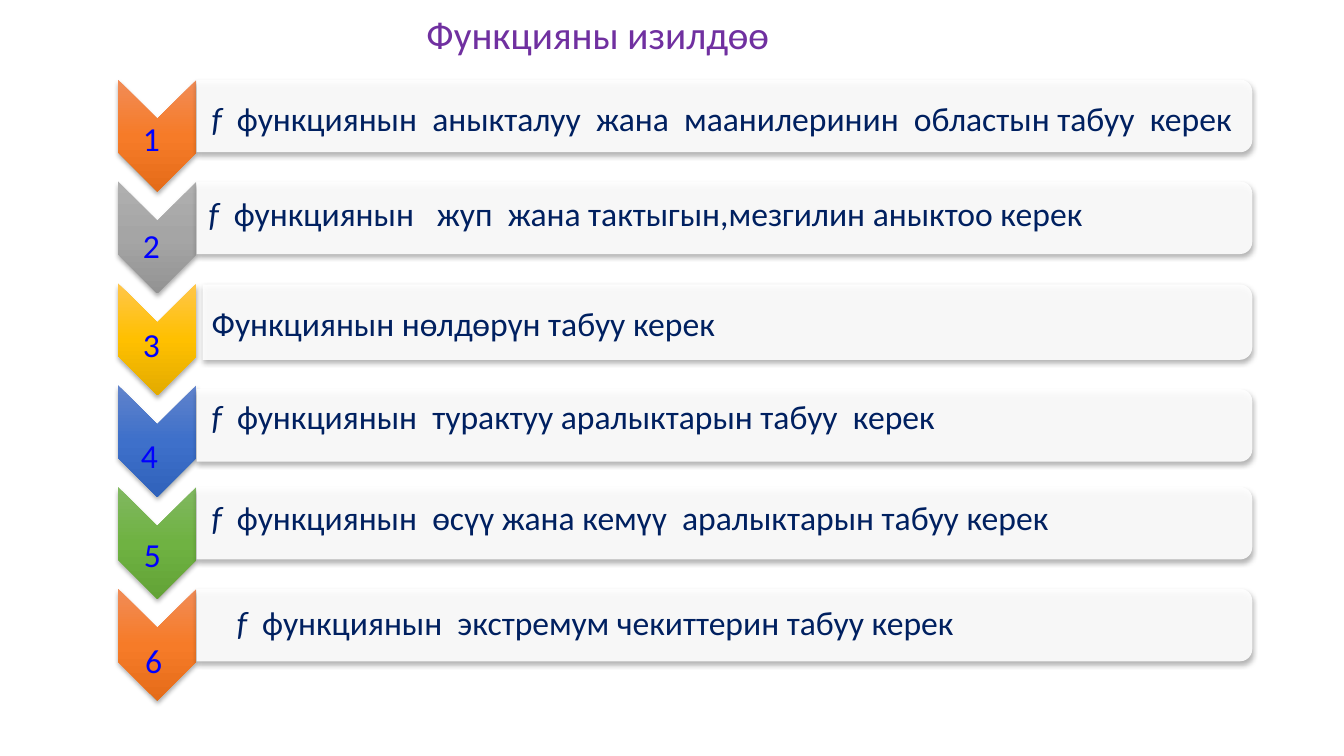
from dataclasses import dataclass

from lxml.etree import SubElement
from pptx import Presentation
from pptx.dml.color import RGBColor
from pptx.enum.shapes import MSO_SHAPE as Preset
from pptx.enum.text import MSO_ANCHOR as Anchor, PP_ALIGN as Align
from pptx.oxml import parse_xml
from pptx.oxml.ns import qn
from pptx.util import Pt

PX = 9144
FONT = "Calibri"
PURPLE = RGBColor(0x70, 0x30, 0xA0)
BLUE = RGBColor(0x00, 0x00, 0xFF)
NAVY = RGBColor(0x00, 0x20, 0x60)
WHITE = RGBColor(0xFF, 0xFF, 0xFF)
BLACK = RGBColor(0x00, 0x00, 0x00)


def shades(*codes):
    """Return the colours of a three-stop gradient."""
    return [RGBColor.from_string(code) for code in codes]


ORANGE_SHADES = shades("F18C57", "F67B28", "E56C19")
GREY_SHADES = shades("AFAFAF", "A5A5A5", "939393")
GOLD_SHADES = shades("FFC64B", "FFC000", "E3AB00")
BLUE_SHADES = shades("6183CB", "3E70CA", "3062BB")
GREEN_SHADES = shades("81B861", "6FB242", "62A336")

NAMESPACE = "http://schemas.openxmlformats.org/drawingml/2006/main"
CHEVRON_WIDTH, CHEVRON_HEIGHT = 78, 111
ROW_LEFT, ROW_TOP, ROW_WIDTH, ROW_PITCH = 117, 79, 1125, 101


@dataclass
class Step:
    """One numbered step, with offsets in px from its row."""
    colours: list
    symbol: str
    wording: str
    number_at: tuple
    text_at: tuple
    text_width: int
    bar_at: tuple = (78, 0)
    bar_height: int = 72


STEPS = [
    Step(ORANGE_SHADES, "f  ",
         "функциянын  аныкталуу  жана  маанилеринин  областын табуу  керек",
         (15, 33), (83, 13), 1067),
    Step(GREY_SHADES, "f  ",
         "функциянын   жуп  жана тактыгын,мезгилин аныктоо керек",
         (15, 38), (80, 6), 986),
    Step(GOLD_SHADES, "", "Функциянын нөлдөрүн табуу керек",
         (15, 35), (83, 15), 751, (84, 1), 75),
    Step(BLUE_SHADES, "f  ", "функциянын  турактуу аралыктарын табуу  керек",
         (13, 45), (83, 6), 992, (78, 4)),
    Step(GREEN_SHADES, "f  ",
         "функциянын  өсүү жана кемүү  аралыктарын табуу керек",
         (16, 42), (83, 5), 967),
    Step(ORANGE_SHADES, "f  ", "функциянын  экстремум чекиттерин табуу керек",
         (17, 46), (108, 8), 751),
]


def add_span(para, text, size, colour, italic=False):
    """Add one formatted run to a paragraph."""
    span = para.add_run()
    span.text = text
    font = span.font
    font.name, font.size, font.italic = FONT, Pt(size), italic
    font.color.rgb = colour


def add_label(page, left, top, width, spans, colour):
    """Place a one-line text box made of (text, italic) spans."""
    box = page.shapes.add_textbox(left * PX, top * PX, width * PX, 50 * PX)
    box.text_frame.word_wrap = True
    for text, italic in spans:
        add_span(box.text_frame.paragraphs[0], text, 24, colour, italic)


def add_turned_shape(page, preset, left, top, width, height):
    """Place a shape turned by 90 degrees so that it fills the given box."""
    shape = page.shapes.add_shape(
        preset,
        round((left + (width - height) / 2) * PX),
        round((top + (height - width) / 2) * PX),
        height * PX, width * PX)
    shape.rotation = 90
    shape.line.fill.background()
    return shape


def add_shadow(shape):
    """Give a shape a soft shadow that falls downwards."""
    shape._element.spPr.append(parse_xml(
        f'<a:effectLst xmlns:a="{NAMESPACE}"><a:outerShdw blurRad="44450" '
        'dist="27940" dir="5400000" algn="ctr" rotWithShape="0">'
        f'<a:srgbClr val="{BLACK}"><a:alpha val="32000"/></a:srgbClr>'
        '</a:outerShdw></a:effectLst>'))


def fill_gradient(shape, colours):
    """Fill a shape with an upright gradient of evenly spaced colours."""
    shape.fill.gradient()
    gradient = shape._element.spPr.find(qn("a:gradFill"))
    gradient.set("rotWithShape", "0")
    stops = gradient.find(qn("a:gsLst"))
    for stop in list(stops):
        stops.remove(stop)
    for index, colour in enumerate(colours):
        stop = SubElement(stops, qn("a:gs"), pos=str(index * 50000))
        SubElement(stop, qn("a:srgbClr"), val=str(colour))
    gradient.find(qn("a:lin")).set("ang", "5400000")


def add_title(page, left, top, width, height):
    """Write the slide title in its placeholder."""
    title = page.shapes.title
    title.left, title.top = left * PX, top * PX
    title.width, title.height = width * PX, height * PX
    frame = title.text_frame
    frame.word_wrap = False
    frame.vertical_anchor = Anchor.TOP
    para = frame.paragraphs[0]
    para.alignment = Align.LEFT
    add_span(para, "Функцияны изилдөө", 28, PURPLE)


def add_step_shapes(page, step, left, top, width):
    """Draw the chevron and the bar of one row."""
    chevron = add_turned_shape(page, Preset.CHEVRON, left, top,
                               CHEVRON_WIDTH, CHEVRON_HEIGHT)
    fill_gradient(chevron, step.colours)
    add_shadow(chevron)
    bar_x, bar_y = step.bar_at
    bar = add_turned_shape(page, Preset.ROUND_2_SAME_RECTANGLE, left + bar_x,
                           top + bar_y, width - bar_x, step.bar_height)
    bar.fill.solid()
    bar.fill.fore_color.rgb = WHITE
    colour = bar._element.spPr.find(qn("a:solidFill"))[0]
    SubElement(colour, qn("a:alpha"), val="90000")
    add_shadow(bar)


def add_step_text(page, number, step, left, top):
    """Write the number and the wording of one row."""
    number_x, number_y = step.number_at
    add_label(page, left + number_x, top + number_y, 37,
              [(str(number), False)], BLUE)
    spans = [(step.symbol, True)] if step.symbol else []
    text_x, text_y = step.text_at
    add_label(page, left + text_x, top + text_y, step.text_width,
              spans + [(step.wording, False)], NAVY)


def add_steps(page, left, top, width, pitch):
    """Stack the rows of all steps."""
    for index, step in enumerate(STEPS):
        row_top = top + index * pitch
        add_step_shapes(page, step, left, row_top, width)
        add_step_text(page, index + 1, step, left, row_top)


def main():
    """Build the deck and save it."""
    deck = Presentation()
    deck.slide_width, deck.slide_height = 1333 * PX, 750 * PX
    page = deck.slides.add_slide(deck.slide_layouts.get_by_name("Title Only"))
    add_title(page, 413, 5, 364, 57)
    add_steps(page, ROW_LEFT, ROW_TOP, ROW_WIDTH, ROW_PITCH)
    deck.save("out.pptx")


if __name__ == "__main__":
    main()
